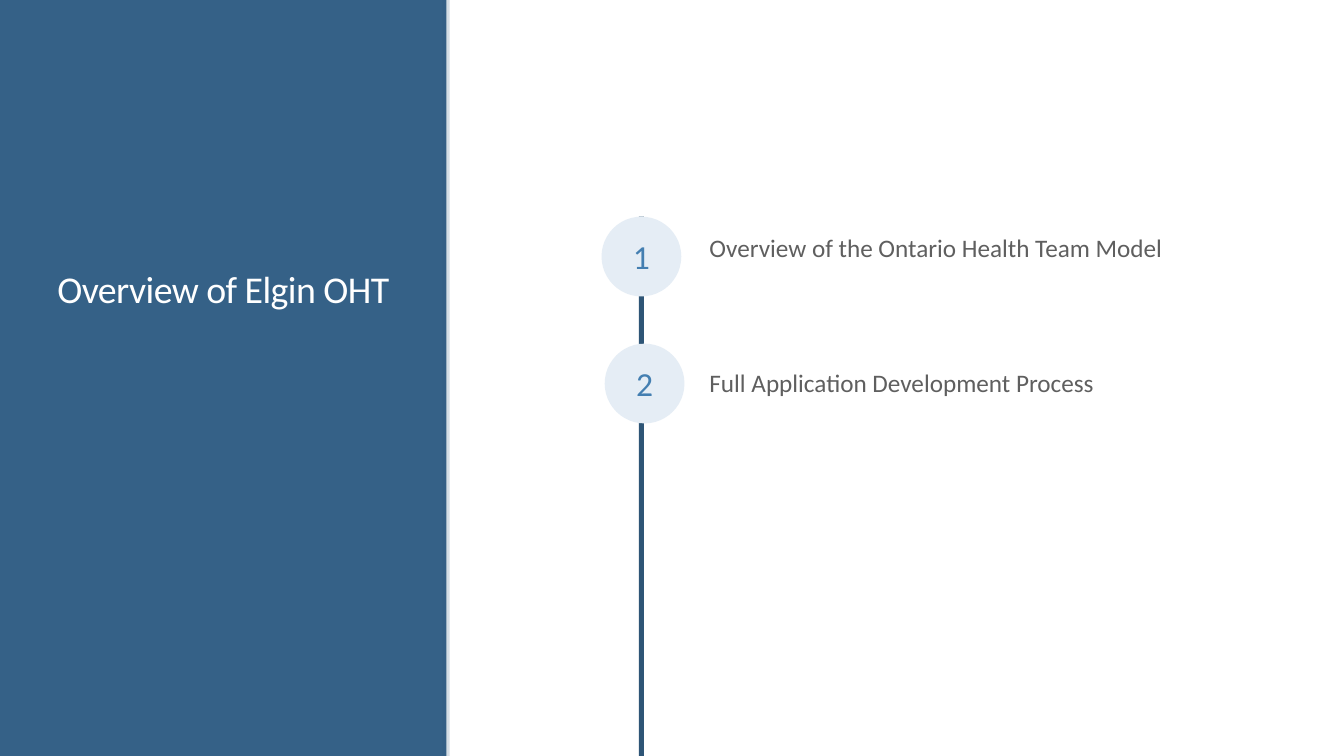
"""Build the section slide with a title panel and a numbered timeline."""
import pptx
import pptx.dml.color
import pptx.enum.shapes
import pptx.enum.text
import pptx.oxml.ns
import lxml.etree
from dataclasses import dataclass
from pptx.util import Cm


@dataclass(frozen=True)
class Theme:
    font: str = "Calibri"
    panel: str = "356187"
    panel_edge: str = "315A7D"
    timeline: str = "2E5576"
    circle: str = "E5EDF5"
    number: str = "447FB1"
    label: str = "5F5F5F"
    title: str = "FFFFFF"
    title_size: int = 27
    number_size: int = 24
    label_size: int = 18


theme = Theme()
SHAPES = pptx.enum.shapes.MSO_SHAPE
ANCHORS = pptx.enum.text.MSO_ANCHOR
ALIGNMENTS = pptx.enum.text.PP_ALIGN


def add_filled_shape(kind, left, top, width, height, color):
    shape = slide.shapes.add_shape(kind, Cm(left), Cm(top), Cm(width), Cm(height))
    shape.shadow.inherit = False
    shape.fill.solid()
    shape.fill.fore_color.rgb = pptx.dml.color.RGBColor.from_string(color)
    shape.line.fill.background()
    return shape


def write_text(shape, text, size, color, alignment, anchor):
    frame = shape.text_frame
    frame.text = text
    frame.word_wrap = True
    frame.auto_size = pptx.enum.text.MSO_AUTO_SIZE.NONE
    frame.vertical_anchor = anchor
    paragraph = frame.paragraphs[0]
    paragraph.alignment = alignment
    paragraph.font.name = theme.font
    paragraph.font.size = pptx.util.Pt(size)
    paragraph.font.color.rgb = pptx.dml.color.RGBColor.from_string(color)
    return paragraph


presentation = pptx.Presentation()
presentation.slide_width = Cm(33.87)
presentation.slide_height = Cm(19.05)
slide = presentation.slides.add_slide(presentation.slide_layouts[5])

add_filled_shape(SHAPES.RECTANGLE, 0, 0, 11.25, 19.05, theme.panel)
panel_edge = add_filled_shape(SHAPES.RECTANGLE, 11.15, 0, 0.18, 19.05, theme.panel_edge)
edge_color = panel_edge.element.find(".//" + pptx.oxml.ns.qn("a:srgbClr"))
lxml.etree.SubElement(edge_color, pptx.oxml.ns.qn("a:alpha"), val="20000")

title = slide.shapes.title
title.left, title.top, title.width, title.height = Cm(1.19), Cm(1.63), Cm(8.89), Cm(6.35)
title_paragraph = write_text(title, "Overview of Elgin OHT", theme.title_size, theme.title,
                             ALIGNMENTS.LEFT, ANCHORS.BOTTOM)
title_paragraph.line_spacing = 0.85
title_paragraph.runs[0].font.element.set("spc", "-40") if hasattr(
    title_paragraph.runs[0].font, "element") else None
for run_properties in title.element.iter(pptx.oxml.ns.qn("a:defRPr"), pptx.oxml.ns.qn("a:rPr")):
    run_properties.set("spc", "-40")
title.element.getparent().append(title.element)

add_filled_shape(SHAPES.RECTANGLE, 16.1, 5.46, 0.13, 13.59, theme.timeline)

agenda = [
    ("Overview of the Ontario Health Team Model", 15.16, 5.46, 5.74),
    ("Full Application Development Process", 15.24, 8.66, 9.14),
]
for number, (topic, circle_left, circle_top, label_top) in enumerate(agenda, start=1):
    circle = add_filled_shape(SHAPES.OVAL, circle_left, circle_top, 2.01, 2.01, theme.circle)
    write_text(circle, str(number), theme.number_size, theme.number,
               ALIGNMENTS.CENTER, ANCHORS.MIDDLE)
    label = slide.shapes.add_textbox(Cm(17.63), Cm(label_top), Cm(12.55), Cm(1.02))
    write_text(label, topic, theme.label_size, theme.label, ALIGNMENTS.LEFT, ANCHORS.TOP)

presentation.save("out.pptx")
